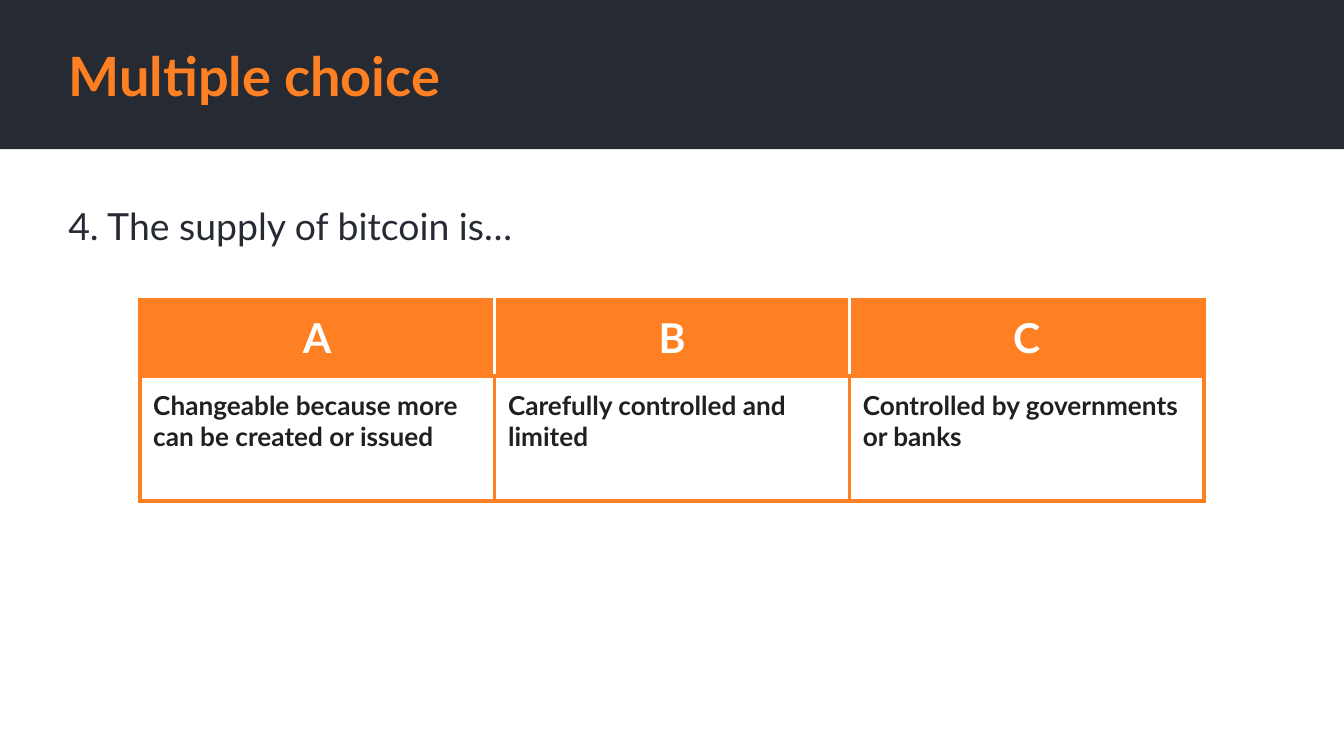
from typing import NamedTuple

from lxml.etree import SubElement
from pptx import Presentation
from pptx.dml.color import RGBColor
from pptx.enum.shapes import MSO_SHAPE as Shape
from pptx.enum.text import MSO_ANCHOR as Anchor, MSO_AUTO_SIZE as AutoSize, PP_ALIGN as Align
from pptx.oxml.ns import qn
from pptx.util import Inches, Pt

ORANGE, DARK, INK, WHITE = "FF8022", "262A33", "231F20", "FFFFFF"
MARGIN = Inches(0.1)
COLUMN_WIDTH, HEADER_HEIGHT, ANSWER_HEIGHT = 2.64, 0.56, 0.93


class TextStyle(NamedTuple):
    size: float
    color: str
    bold: bool = False
    align: Align = Align.LEFT


class Choice(NamedTuple):
    letter: str
    answer: str


TITLE = TextStyle(29, ORANGE, bold=True)
QUESTION = TextStyle(20, DARK)
LETTER = TextStyle(22, WHITE, bold=True, align=Align.CENTER)
ANSWER = TextStyle(14, INK, bold=True)

CHOICES = [
    Choice("A", "Changeable because more can be created or issued"),
    Choice("B", "Carefully controlled and limited"),
    Choice("C", "Controlled by governments or banks"),
]


def rgb(color: str) -> RGBColor:
    return RGBColor.from_string(color)


def write(frame, text: str, style: TextStyle) -> None:
    frame.word_wrap = True
    para = frame.paragraphs[0]
    para.alignment = style.align
    span = para.add_run()
    span.text = text
    font_values = {"name": "Lato", "size": Pt(style.size), "bold": style.bold}
    for name, value in font_values.items():
        setattr(span.font, name, value)
    span.font.color.rgb = rgb(style.color)


def format_frame(frame, anchor: Anchor) -> None:
    values = {
        "margin_left": MARGIN, "margin_right": MARGIN,
        "margin_top": MARGIN, "margin_bottom": MARGIN,
        "vertical_anchor": anchor, "auto_size": AutoSize.NONE,
    }
    for name, value in values.items():
        setattr(frame, name, value)


def add_border(cell, side: str, color: str) -> None:
    line = SubElement(cell._tc.get_or_add_tcPr(), qn(f"a:ln{side}"), w=str(Pt(2.25)))
    fill = SubElement(line, qn("a:solidFill"))
    SubElement(fill, qn("a:srgbClr"), val=color)


def fill_cell(cell, text: str, style: TextStyle, fill: str, borders: dict[str, str]) -> None:
    for side, color in borders.items():
        add_border(cell, side, color)
    cell.fill.solid()
    cell.fill.fore_color.rgb = rgb(fill)
    for edge in ("left", "right", "top", "bottom"):
        setattr(cell, f"margin_{edge}", MARGIN)
    write(cell.text_frame, text, style)


def add_choices(page, choices: list[Choice]) -> None:
    count = len(choices)
    table = page.shapes.add_table(
        2, count, Inches(1.04), Inches(2.23),
        Inches(COLUMN_WIDTH * count), Inches(HEADER_HEIGHT + ANSWER_HEIGHT),
    ).table
    table.rows[0].height = Inches(HEADER_HEIGHT)
    table.rows[1].height = Inches(ANSWER_HEIGHT)
    frame_borders = dict.fromkeys("LRTB", ORANGE)
    for index, choice in enumerate(choices):
        table.columns[index].width = Inches(COLUMN_WIDTH)
        header_borders = frame_borders | {
            "L": ORANGE if index == 0 else WHITE,
            "R": ORANGE if index == count - 1 else WHITE,
        }
        fill_cell(table.cell(0, index), choice.letter, LETTER, ORANGE, header_borders)
        fill_cell(table.cell(1, index), choice.answer, ANSWER, WHITE, frame_borders)


def main() -> None:
    deck = Presentation()
    deck.slide_width, deck.slide_height = Inches(10), Inches(10 * 9 / 16)
    page = deck.slides.add_slide(deck.slide_layouts[5])

    band = page.shapes.add_shape(Shape.RECTANGLE, 0, 0, deck.slide_width, Inches(1.11))
    band.shadow.inherit = False
    band.fill.solid()
    band.fill.fore_color.rgb = rgb(DARK)
    band.line.fill.background()

    title = page.shapes.title
    band.element.addnext(title.element)  # bring the title in front of the band
    title.left, title.top = Inches(0.41), Inches(0.28)
    title.width, title.height = Inches(8.74), Inches(0.56)
    format_frame(title.text_frame, Anchor.MIDDLE)
    write(title.text_frame, "Multiple choice", TITLE)

    question = page.shapes.add_textbox(Inches(0.41), Inches(1.41), Inches(8.38), Inches(0.91))
    format_frame(question.text_frame, Anchor.TOP)
    write(question.text_frame, "4. The supply of bitcoin is…", QUESTION)

    add_choices(page, CHOICES)
    deck.save("out.pptx")


if __name__ == "__main__":
    main()
